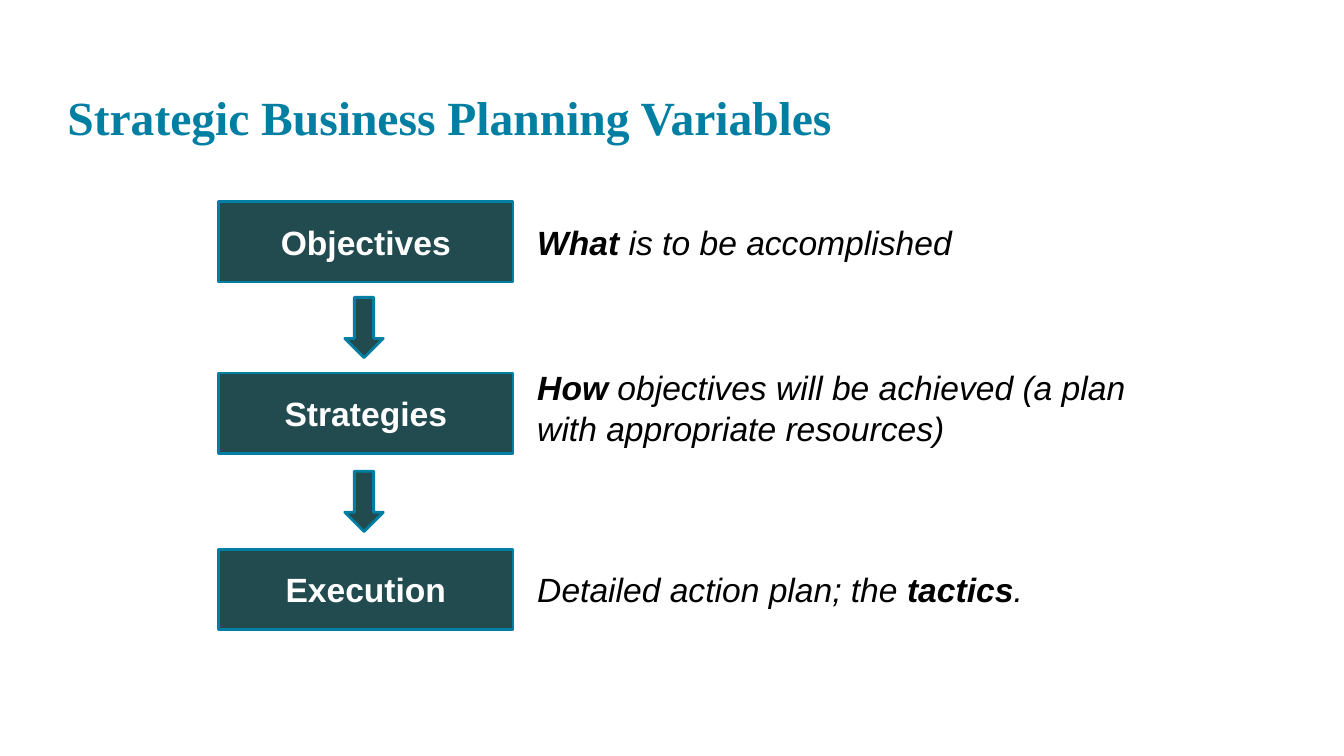
from pptx import Presentation
from pptx.dml.color import RGBColor
from pptx.enum.shapes import MSO_SHAPE
from pptx.enum.text import MSO_ANCHOR, PP_ALIGN
from pptx.util import Cm, Pt

RECT, ARROW = MSO_SHAPE.RECTANGLE, MSO_SHAPE.DOWN_ARROW
LEFT, CENTER = PP_ALIGN.LEFT, PP_ALIGN.CENTER
MIDDLE, BOTTOM = MSO_ANCHOR.MIDDLE, MSO_ANCHOR.BOTTOM

TITLE = "Strategic Business Planning Variables"
# Each step: label, top of its box, top of its note, note as (text, bold) runs
STEPS = [
    ("Objectives", 5.08, 5.08,
     [("What", True), (" is to be accomplished", False)]),
    ("Strategies", 9.4, 9.25,
     [("How", True),
      (" objectives will be achieved (a plan with appropriate resources)", False)]),
    ("Execution", 13.84, 13.84,
     [("Detailed action plan; the ", False), ("tactics", True), (".", False)]),
]

THEME = {
    "teal": RGBColor(0x00, 0x7F, 0xA3),
    "dark": RGBColor(0x22, 0x4B, 0x50),
    "white": RGBColor(0xFF, 0xFF, 0xFF),
    "black": RGBColor(0x00, 0x00, 0x00),
    "serif": "Times New Roman",
    "sans": "Arial",
    "title": Pt(34),
    "body": Pt(24),
    "line": Pt(2),
}

BOX_X, BOX_W, ROW_H = 5.51, 7.42, 2.03
NOTE_X, NOTE_W = 13.54, 15.04
ARROW_X, ARROW_W, ARROW_H = 8.69, 0.97, 1.52


def write(shape, runs, face, size, color, align=LEFT, anchor=MIDDLE, italic=None):
    """Fill a shape with one paragraph of (text, bold) runs, without insets."""
    frame = shape.text_frame
    frame.word_wrap = True
    frame.vertical_anchor = anchor
    frame.margin_left = frame.margin_right = Cm(0)
    frame.margin_top = frame.margin_bottom = Cm(0)
    para = frame.paragraphs[0]
    para.alignment = align
    font = para.font
    font.name, font.size, font.italic = THEME[face], THEME[size], italic
    font.color.rgb = THEME[color]
    for text, bold in runs:
        run = para.add_run()
        run.text = text
        run.font.bold = bold


def add_block(slide, kind, x, y, w, h):
    """Add a dark shape with a teal outline."""
    block = slide.shapes.add_shape(kind, Cm(x), Cm(y), Cm(w), Cm(h))
    block.shadow.inherit = False
    block.fill.solid()
    block.fill.fore_color.rgb = THEME["dark"]
    block.line.color.rgb = THEME["teal"]
    block.line.width = THEME["line"]
    return block


def main():
    deck = Presentation()
    deck.slide_width, deck.slide_height = Cm(33.87), Cm(19.05)
    slide = deck.slides.add_slide(deck.slide_layouts[6])

    title = slide.shapes.add_textbox(Cm(1.7), Cm(0.61), Cm(30.48), Cm(3.05))
    write(title, [(TITLE, True)], "serif", "title", "teal", anchor=BOTTOM)

    for label, top, note_top, runs in STEPS:
        box = add_block(slide, RECT, BOX_X, top, BOX_W, ROW_H)
        write(box, [(label, True)], "sans", "body", "white", CENTER)
        note = slide.shapes.add_textbox(Cm(NOTE_X), Cm(note_top), Cm(NOTE_W), Cm(ROW_H))
        write(note, runs, "sans", "body", "black", italic=True)

    # Each arrow sits midway between two boxes
    tops = [step[1] for step in STEPS]
    for top, after in zip(tops, tops[1:]):
        y = (top + ROW_H + after - ARROW_H) / 2
        add_block(slide, ARROW, ARROW_X, y, ARROW_W, ARROW_H)

    deck.save("out.pptx")


if __name__ == "__main__":
    main()
